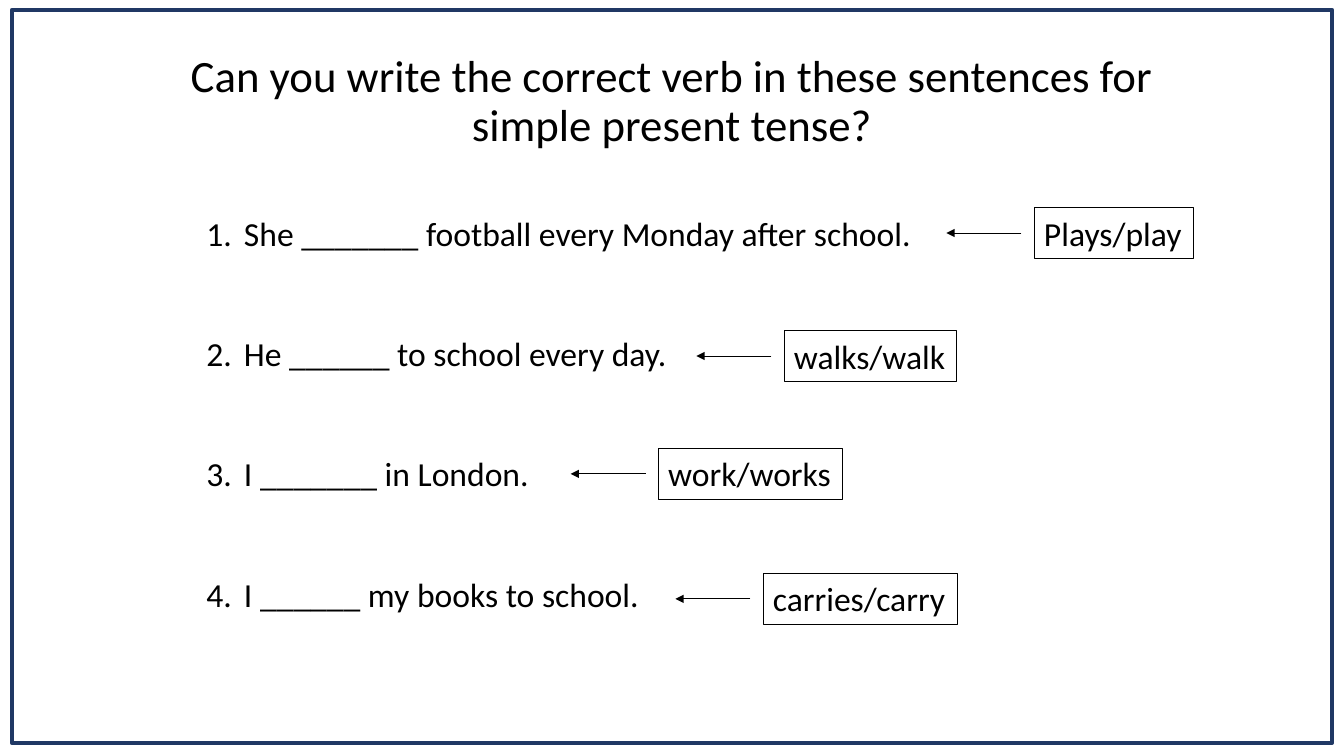
from lxml.etree import SubElement
from pptx import Presentation
from pptx.dml.color import RGBColor
from pptx.enum.shapes import MSO_CONNECTOR, MSO_SHAPE
from pptx.enum.text import MSO_ANCHOR, PP_ALIGN
from pptx.oxml.ns import qn
from pptx.util import Cm, Pt

COLORS = {"border": "203864", "ink": "000000"}
FONT = "Calibri"
TITLE = "Can you write the correct verb in these sentences for simple present tense?"
SENTENCES = [
    "She _______ football every Monday after school.",
    "He ______ to school every day.",
    "I _______ in London.",
    "I ______ my books to school.",
]
CHOICES = [
    ("Plays/play", 26.06, 5.23, 4.01),
    ("walks/walk", 19.76, 8.33, 4.34),
    ("work/works", 16.59, 11.3, 4.65),
    ("carries/carry", 19.23, 14.45, 4.9),
]


def color(name):
    """Return the named colour."""
    return RGBColor.from_string(COLORS[name])


def set_line(s, name, width):
    """Give a shape or connector a solid line."""
    s.line.color.rgb = color(name)
    s.line.width = Pt(width)


def add_text(slide, box, paragraphs, size=24, align=PP_ALIGN.LEFT,
             anchor=MSO_ANCHOR.TOP, spacing=1.0, gap=0, wrap=True):
    """Add a text box with one paragraph per string."""
    s = slide.shapes.add_textbox(*(Cm(v) for v in box))
    tf = s.text_frame
    tf.word_wrap = wrap
    tf.vertical_anchor = anchor
    for i, text in enumerate(paragraphs):
        p = tf.add_paragraph() if i else tf.paragraphs[0]
        p.alignment = align
        p.line_spacing = spacing
        p.space_before = Pt(gap if i else 0)
        r = p.add_run()
        r.text = text
        r.font.name = FONT
        r.font.size = Pt(size)
        r.font.color.rgb = color("ink")
    return s


def add_border(slide, box):
    """Frame the slide with an unfilled rectangle."""
    s = slide.shapes.add_shape(MSO_SHAPE.RECTANGLE, *(Cm(v) for v in box))
    s.shadow.inherit = False
    s.fill.background()
    set_line(s, "border", 3)


def add_sentences(slide, box):
    """Add the numbered sentences, spaced evenly down the box."""
    s = add_text(slide, box, SENTENCES, gap=57.2)
    for p in s.text_frame.paragraphs:
        pPr = p._p.get_or_add_pPr()
        pPr.set("marL", str(Cm(0.95)))
        pPr.set("indent", str(-Cm(0.95)))
        SubElement(pPr, qn("a:buFont"), typeface="+mj-lt")
        SubElement(pPr, qn("a:buAutoNum"), type="arabicPeriod")


def add_choice(slide, text, x, y, w, h=1.28):
    """Add a framed pair of verbs and the arrow to its sentence."""
    s = add_text(slide, (x, y, w, h), [text], wrap=False)
    set_line(s, "ink", 0.75)
    mid = Cm(y + h / 2)
    arrow = slide.shapes.add_connector(
        MSO_CONNECTOR.STRAIGHT, Cm(x - 0.32), mid, Cm(x - 2.21), mid)
    set_line(arrow, "ink", 0.5)
    SubElement(arrow.line._get_or_add_ln(), qn("a:tailEnd"), type="triangle")
    SubElement(arrow._element.spPr, qn("a:effectLst"))


def main():
    """Build and save the slide."""
    prs = Presentation()
    prs.slide_width, prs.slide_height = Cm(33.87), Cm(19.05)
    slide = prs.slides.add_slide(prs.slide_layouts[6])
    add_text(slide, (4.5, 0.74, 24.87, 3.68), [TITLE], size=32,
             align=PP_ALIGN.CENTER, anchor=MSO_ANCHOR.MIDDLE, spacing=0.9)
    add_border(slide, (0.3, 0.25, 33.27, 18.47))
    add_sentences(slide, (4.95, 5.23, 18.47, 10.52))
    for choice in CHOICES:
        add_choice(slide, *choice)
    prs.save("out.pptx")


if __name__ == "__main__":
    main()
